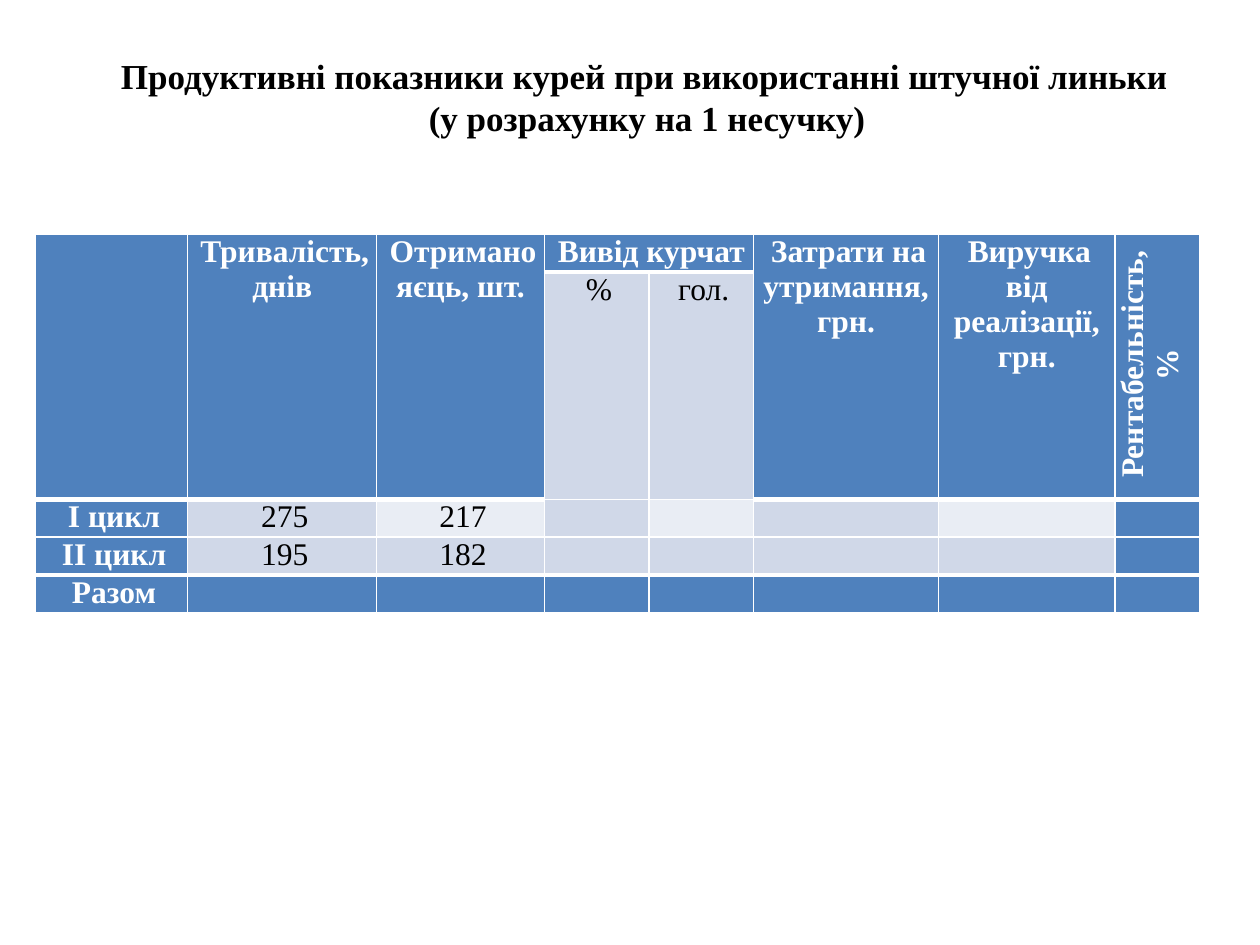
"""Builds a slide with a table of hens' output under forced moulting."""
from dataclasses import dataclass

from lxml import etree
from pptx import Presentation
from pptx.dml.color import RGBColor
from pptx.enum import text
from pptx.oxml.ns import qn
from pptx.util import Inches, Pt

WHITE = RGBColor(0xFF, 0xFF, 0xFF)
BLACK = RGBColor(0, 0, 0)
BLUE = RGBColor(0x4F, 0x81, 0xBD)
MID = RGBColor(0xD0, 0xD8, 0xE8)
PALE = RGBColor(0xE9, 0xED, 0xF4)
FACE = "Times New Roman"
COLS = (1.21, 1.5, 1.33, 0.83, 0.83, 1.47, 1.4, 0.67)
ROWS = (0.3, 1.8, 0.3, 0.3, 0.3)
PAIR = (3, 4)
LAST = len(COLS) - 1


@dataclass(frozen=True)
class Cell:
    row: int
    col: int
    words: str
    down: int = 1
    wide: int = 1


CELLS = (
    Cell(0, 0, "", down=2),
    Cell(0, 1, "Тривалість, днів", down=2),
    Cell(0, 2, "Отримано яєць, шт.", down=2),
    Cell(0, 3, "Вивід курчат", wide=2),
    Cell(0, 5, "Затрати на утримання, грн.", down=2),
    Cell(0, 6, "Виручка від реалізації, грн.", down=2),
    Cell(0, 7, "Рентабельність,\n%", down=2),
    Cell(1, 3, "%"),
    Cell(1, 4, "гол."),
    Cell(2, 0, "І цикл"),
    Cell(2, 1, "275"),
    Cell(2, 2, "217"),
    Cell(3, 0, "ІІ цикл"),
    Cell(3, 1, "195"),
    Cell(3, 2, "182"),
    Cell(4, 0, "Разом"),
)


def style(para, size: int, bold: bool, color: RGBColor, indent: float) -> None:
    """Centre a paragraph and set its font and first-line indent."""
    para.alignment = text.PP_ALIGN.CENTER
    font = para.font
    font.name, font.size, font.bold = FACE, Pt(size), bold
    font.color.rgb = color
    props = para._p.get_or_add_pPr()
    props.set("marL", "0")
    props.set("indent", str(Inches(indent)))


def shade(row: int, col: int) -> RGBColor:
    """Give the fill of a cell by its place in the grid."""
    if row in (0, 4) or col in (0, LAST) or (row == 1 and col not in PAIR):
        return BLUE
    return PALE if row == 2 and col % 2 == 0 else MID


def weight(edge: int, col: int) -> int:
    """Give the width in points of the rule above a row."""
    head = 1 if col in PAIR else 2
    return 3 if edge in (head, 4) else 1


def rule(cell, row: int, col: int) -> None:
    """Draw the four white borders of a cell."""
    props = cell._tc.get_or_add_tcPr()
    sides = {"L": 1, "R": 1, "T": weight(row, col), "B": weight(row + 1, col)}
    for side, width in sides.items():
        line = etree.SubElement(props, qn(f"a:ln{side}"), w=str(Pt(width)))
        fill = etree.SubElement(line, qn("a:solidFill"))
        etree.SubElement(fill, qn("a:srgbClr"), val=str(WHITE))


def dress(cell, row: int, col: int) -> None:
    """Set the margins, borders, fill and font of a cell."""
    cell.margin_left = cell.margin_right = 0
    cell.margin_top = cell.margin_bottom = 0
    rule(cell, row, col)
    color = shade(row, col)
    cell.fill.solid()
    cell.fill.fore_color.rgb = color
    head = color == BLUE
    for para in cell.text_frame.paragraphs:
        style(para, 18, head, WHITE if head else BLACK, 0.04)


def grid(slide) -> None:
    """Add the table."""
    table = slide.shapes.add_table(
        len(ROWS), len(COLS), Inches(0.28), Inches(1.86),
        Inches(sum(COLS)), Inches(sum(ROWS))).table
    table.first_row = table.horz_banding = False
    for col, width in zip(table.columns, COLS):
        col.width = Inches(width)
    for row, height in zip(table.rows, ROWS):
        row.height = Inches(height)
    for item in CELLS:
        cell = table.cell(item.row, item.col)
        cell.text = item.words
        if item.down > 1 or item.wide > 1:
            cell.merge(table.cell(item.row + item.down - 1,
                                  item.col + item.wide - 1))
    for row in range(len(ROWS)):
        for col in range(len(COLS)):
            dress(table.cell(row, col), row, col)
    table.cell(0, LAST)._tc.get_or_add_tcPr().set("vert", "vert270")


def title(slide) -> None:
    """Add the two-line heading."""
    box = slide.shapes.add_textbox(
        Inches(0.71), Inches(0.38), Inches(8.81), Inches(0.77))
    frame = box.text_frame
    frame.word_wrap = False
    frame.auto_size = text.MSO_AUTO_SIZE.SHAPE_TO_FIT_TEXT
    frame.vertical_anchor = text.MSO_ANCHOR.MIDDLE
    frame.text = ("Продуктивні показники курей при використанні штучної линьки\n"
                  "(у розрахунку на 1 несучку)")
    for para, indent in zip(frame.paragraphs, (-0.06, 0.04)):
        style(para, 20, True, BLACK, indent)


def main() -> None:
    """Build and save the slide."""
    deck = Presentation()
    deck.slide_width, deck.slide_height = Inches(10), Inches(7.5)
    slide = deck.slides.add_slide(deck.slide_layouts[6])
    grid(slide)
    title(slide)
    deck.save("out.pptx")


if __name__ == "__main__":
    main()
